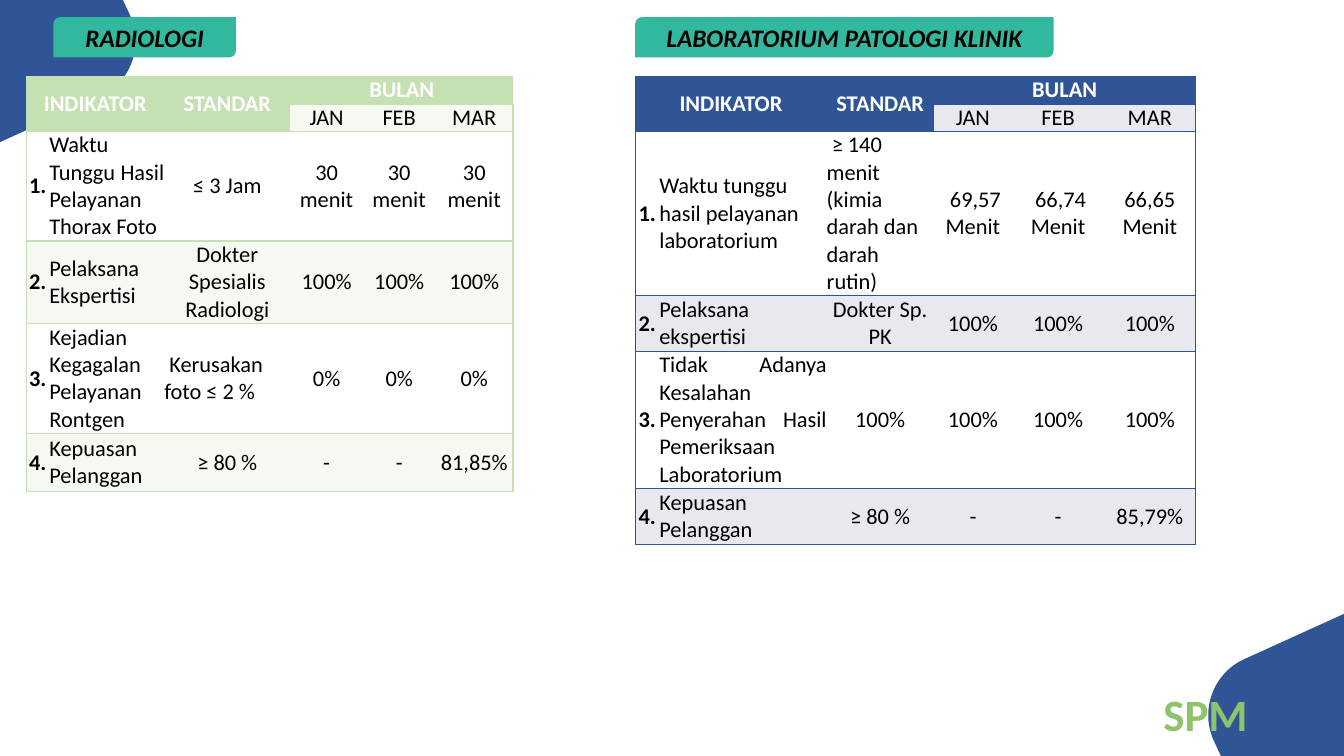
import pptx
import pptx.dml.color
import pptx.enum.shapes
import pptx.enum.text
import pptx.oxml
import pptx.oxml.ns
import pptx.util

Inches = pptx.util.Inches
ALIGN = pptx.enum.text.PP_ALIGN
MIDDLE = pptx.enum.text.MSO_ANCHOR.MIDDLE
SLIDE_WIDTH, SLIDE_HEIGHT = 13.33, 7.5
NAVY, GREEN, TEAL = "2F5597", "C5E0B3", "32B89E"
WHITE, BLACK, LIME = "FFFFFF", "000000", "8EC36B"
MONTHS = ["JAN", "FEB", "MAR"]

RADIOLOGY = [
    ["Waktu Tunggu Hasil Pelayanan Thorax Foto", "≤ 3 Jam", "30 menit", "30 menit", "30 menit"],
    ["Pelaksana Ekspertisi", "Dokter Spesialis Radiologi", "100%", "100%", "100%"],
    ["Kejadian Kegagalan Pelayanan Rontgen", " Kerusakan foto ≤ 2 %", "0%", "0%", "0%"],
    ["Kepuasan Pelanggan", "≥ 80 %", "-", "-", "81,85%"],
]
LABORATORY = [
    ["Waktu tunggu hasil pelayanan laboratorium",
     " ≥ 140 menit\n(kimia darah dan darah rutin)", " 69,57 Menit", " 66,74 Menit", "66,65 Menit"],
    ["Pelaksana ekspertisi", "Dokter Sp. PK", "100%", "100%", "100%"],
    ["Tidak Adanya Kesalahan Penyerahan Hasil Pemeriksaan Laboratorium",
     "100%", "100%", "100%", "100%"],
    ["Kepuasan Pelanggan", "≥ 80 %", "-", "-", "85,79%"],
]


def rgb(value):
    """Return the colour for a hex string."""
    return pptx.dml.color.RGBColor.from_string(value)


def set_values(target, values):
    """Set each attribute named in a dict."""
    for name, value in values.items():
        setattr(target, name, value)


def write(frame, text, size, color, align, **style):
    """Write lines of text as formatted paragraphs."""
    frame.text = text
    for paragraph in frame.paragraphs:
        paragraph.alignment = align
        for run in paragraph.runs:
            set_values(run.font, {"name": "Calibri", "size": pptx.util.Pt(size), **style})
            run.font.color.rgb = rgb(color)


def paint(shape, color):
    """Give a shape a plain fill without line or shadow."""
    shape.shadow.inherit = False
    shape.fill.solid()
    shape.fill.fore_color.rgb = rgb(color)
    shape.line.fill.background()


def curve(start, first, second, end, steps=24):
    """Return points along a cubic curve after its start."""
    points = []
    for step in range(1, steps + 1):
        t = step / steps
        weights = ((1 - t) ** 3, 3 * t * (1 - t) ** 2, 3 * t * t * (1 - t), t ** 3)
        points.append(tuple(
            sum(w * p[axis] for w, p in zip(weights, (start, first, second, end)))
            for axis in (0, 1)))
    return points


def add_corner(slide, mirrored):
    """Draw the navy corner at top left, or mirrored at bottom right."""
    bend = (1.29, 0.15)
    outline = [(0, 0), (1.22, 0), bend]
    outline += curve(bend, (1.43, 0.45), (1.3, 0.82), (0.99, 0.96)) + [(0, 1.41)]
    if mirrored:
        outline = [(SLIDE_WIDTH - x, SLIDE_HEIGHT - y) for x, y in outline]
    points = [(Inches(x), Inches(y)) for x, y in outline]
    builder = slide.shapes.build_freeform(*points[0])
    builder.add_line_segments(points[1:], close=True)
    paint(builder.convert_to_shape(), NAVY)


def add_label(slide, text, left, width):
    """Add a teal heading above a table."""
    label = slide.shapes.add_shape(
        pptx.enum.shapes.MSO_SHAPE.ROUND_2_DIAG_RECTANGLE,
        Inches(left), Inches(0.17), Inches(width), Inches(0.4))
    paint(label, TEAL)
    label.text_frame.vertical_anchor = MIDDLE
    write(label.text_frame, text, 18, BLACK, ALIGN.CENTER, bold=True, italic=True)


def add_border(cell, side, color):
    """Add one cell border, or an invisible one when color is None."""
    paint_xml = "<a:noFill/>"
    if color:
        paint_xml = f'<a:solidFill><a:srgbClr val="{color}"/></a:solidFill>'
    cell._tc.get_or_add_tcPr().append(pptx.oxml.parse_xml(
        f'<a:ln{side} {pptx.oxml.ns.nsdecls("a")} w="12700">{paint_xml}</a:ln{side}>'))


def format_cell(cell, fill, borders):
    """Set the margins, anchor, borders and fill of a cell."""
    set_values(cell, {"margin_left": 0, "margin_right": 0, "margin_top": 0,
                      "margin_bottom": 0, "vertical_anchor": MIDDLE})
    for side, color in borders.items():
        add_border(cell, side, color)
    cell.fill.solid()
    cell.fill.fore_color.rgb = rgb(fill)


def add_indicators(slide, left, widths, heights, records, accent, band, alignments):
    """Add a table of indicators with standards and monthly results."""
    table = slide.shapes.add_table(
        len(heights), len(widths), Inches(left), Inches(0.76),
        Inches(sum(widths)), Inches(sum(heights))).table
    set_values(table, {"first_row": False, "horz_banding": False})
    for column, width in zip(table.columns, widths):
        column.width = Inches(width)
    for row, height in zip(table.rows, heights):
        row.height = Inches(height)
    last = len(widths) - 1
    for r in range(len(heights)):
        for c in range(len(widths)):
            header = r == 0 or (r == 1 and c < 3)
            fill = accent if header else band if r % 2 else WHITE
            borders = {"L": accent if c == 0 else None,
                       "R": accent if c == last else None, "T": accent, "B": accent}
            format_cell(table.cell(r, c), fill, borders)
    for start, end, title in (((0, 0), (1, 1), "INDIKATOR"), ((0, 2), (1, 2), "STANDAR"),
                              ((0, 3), (0, 5), "BULAN")):
        table.cell(*start).merge(table.cell(*end))
        write(table.cell(*start).text_frame, title, 16, WHITE, ALIGN.CENTER, bold=True)
    for c, month in enumerate(MONTHS, 3):
        write(table.cell(1, c).text_frame, month, 16, BLACK, ALIGN.CENTER, bold=False)
    for number, record in enumerate(records, 1):
        for c, text in enumerate([f"{number}.", *record]):
            align = alignments.get((number, c), ALIGN.JUSTIFY if c == 1 else ALIGN.CENTER)
            write(table.cell(number + 1, c).text_frame, text, 16, BLACK, align, bold=c == 0)


def add_section_mark(slide):
    """Add the section abbreviation at bottom right."""
    mark = slide.shapes.add_textbox(Inches(11.44), Inches(6.76), Inches(1.18), Inches(0.64))
    mark.text_frame.word_wrap = True
    write(mark.text_frame, "SPM", 32, LIME, ALIGN.LEFT, bold=True)


def main():
    """Build and save the slide."""
    deck = pptx.Presentation()
    set_values(deck, {"slide_width": Inches(SLIDE_WIDTH), "slide_height": Inches(SLIDE_HEIGHT)})
    slide = deck.slides.add_slide(deck.slide_layouts[6])
    for mirrored in (True, False):
        add_corner(slide, mirrored)
    add_indicators(slide, 0.26, [0.23, 1.14, 1.25, 0.72, 0.72, 0.77],
                   [0.27, 0.27, 1.08, 0.82, 1.08, 0.58], RADIOLOGY, GREEN, "F5F9F2",
                   {(3, 2): ALIGN.LEFT})
    add_indicators(slide, 6.3, [0.24, 1.66, 1.06, 0.78, 0.91, 0.91],
                   [0.27, 0.27, 1.63, 0.55, 1.36, 0.56], LABORATORY, NAVY, "E8E9EF",
                   {(1, 1): ALIGN.LEFT, (1, 2): ALIGN.LEFT})
    add_label(slide, "RADIOLOGI", 0.53, 1.81)
    add_label(slide, "LABORATORIUM PATOLOGI KLINIK", 6.3, 4.15)
    add_section_mark(slide)
    deck.save("out.pptx")


if __name__ == "__main__":
    main()
